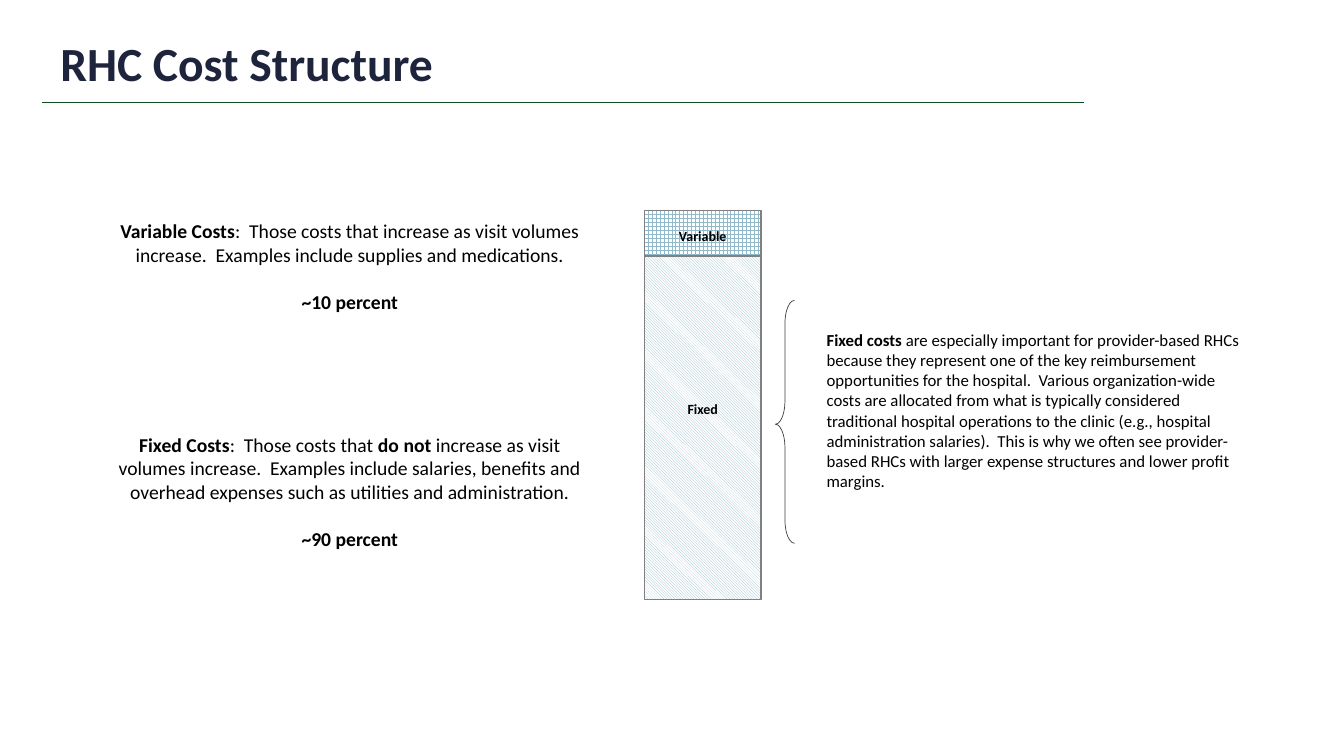
from pptx import Presentation
from pptx.dml.color import RGBColor
from pptx.enum.dml import MSO_PATTERN as PATTERN
from pptx.enum.shapes import MSO_CONNECTOR as CONNECTOR, MSO_SHAPE as SHAPE
from pptx.enum.text import MSO_ANCHOR as ANCHOR, PP_ALIGN as ALIGN
from pptx.oxml.ns import qn
from pptx.util import Pt

PX = 9144  # 100 px to the inch
NAVY = RGBColor(0x1D, 0x24, 0x3C)
GREEN = RGBColor(0x0A, 0x4E, 0x1F)
BLUE = RGBColor(0x91, 0xB9, 0xCA)
WHITE = RGBColor(0xFF, 0xFF, 0xFF)
GRAY = RGBColor(0x80, 0x80, 0x80)
DARK_GRAY = RGBColor(0x40, 0x40, 0x40)
BLACK = RGBColor(0x00, 0x00, 0x00)

prs = Presentation()
prs.slide_width, prs.slide_height = 1333 * PX, 750 * PX
slide = prs.slides.add_slide(prs.slide_layouts[6])
shapes = slide.shapes


def box(*px):
    return [n * PX for n in px]


def add_text(place, paragraphs, size, align=ALIGN.LEFT, anchor=ANCHOR.MIDDLE, color=BLACK):
    """Each paragraph is a list of runs that alternate bold and regular."""
    frame = shapes.add_textbox(*box(*place)).text_frame
    frame.word_wrap = True
    frame.vertical_anchor = anchor
    for i, runs in enumerate(paragraphs):
        para = frame.add_paragraph() if i else frame.paragraphs[0]
        para.alignment = align
        if i:
            para.space_before = Pt(17)
        para.font.name, para.font.size = "Calibri", Pt(size)
        para.font.color.rgb = color
        for j, text in enumerate(runs):
            run = para.add_run()
            run.text = text
            run.font.bold = j % 2 == 0
    return frame


# Title and rule
rule = shapes.add_connector(CONNECTOR.STRAIGHT, *box(42, 102, 1075, 102))
rule.line.color.rgb = GREEN
rule.line.width = Pt(1)
rule._element.spPr.append(rule._element.makeelement(qn("a:effectLst"), {}))
title = add_text((50, 30, 1040, 66), [["RHC Cost Structure"]], 34,
                 anchor=ANCHOR.BOTTOM, color=NAVY)
title.paragraphs[0].line_spacing = 0.9

# Cost column
for top, height, pattern in [
    (254, 341, PATTERN.DARK_DOWNWARD_DIAGONAL),
    (209, 45, PATTERN.LARGE_GRID),
]:
    segment = shapes.add_shape(SHAPE.RECTANGLE, *box(639, top, 116, height))
    segment.shadow.inherit = False
    segment.fill.patterned()
    segment.fill.pattern = pattern
    segment.fill.fore_color.rgb = BLUE
    segment.fill.back_color.rgb = WHITE
    segment.line.color.rgb = GRAY
    segment.line.width = Pt(1)

# Cost definitions
add_text((100, 200, 494, 128), [
    ["Variable Costs", ":  Those costs that increase as visit volumes increase.  "
     "Examples include supplies and medications."],
    ["~10 percent"],
], 14, ALIGN.CENTER)
add_text((100, 412, 494, 151), [
    ["Fixed Costs", ":  Those costs that ", "do not ",
     "increase as visit volumes increase.  Examples include salaries, benefits "
     "and overhead expenses such as utilities and administration."],
    ["~90 percent"],
], 14, ALIGN.CENTER)

# Why fixed costs matter
add_text((810, 321, 440, 172), [[
    "Fixed costs ",
    "are especially important for provider-based RHCs because they represent one of "
    "the key reimbursement opportunities for the hospital.  Various organization-wide "
    "costs are allocated from what is typically considered traditional hospital "
    "operations to the clinic (e.g., hospital administration salaries).  This is why we "
    "often see provider-based RHCs with larger expense structures and lower profit margins.",
]], 12)

# Column labels
add_text((661, 392, 72, 27), [["Fixed"]], 10, ALIGN.CENTER)
add_text((657, 221, 80, 27), [["Variable"]], 10, ALIGN.CENTER)

# Brace from the explanation to the fixed segment
brace = shapes.add_shape(SHAPE.LEFT_BRACE, *box(769, 298, 19, 241))
brace.shadow.inherit = False
brace.adjustments[0] = 1.22
brace.adjustments[1] = 0.51
brace.fill.background()
brace.line.color.rgb = DARK_GRAY
brace.line.width = Pt(0.5)

prs.save("out.pptx")
